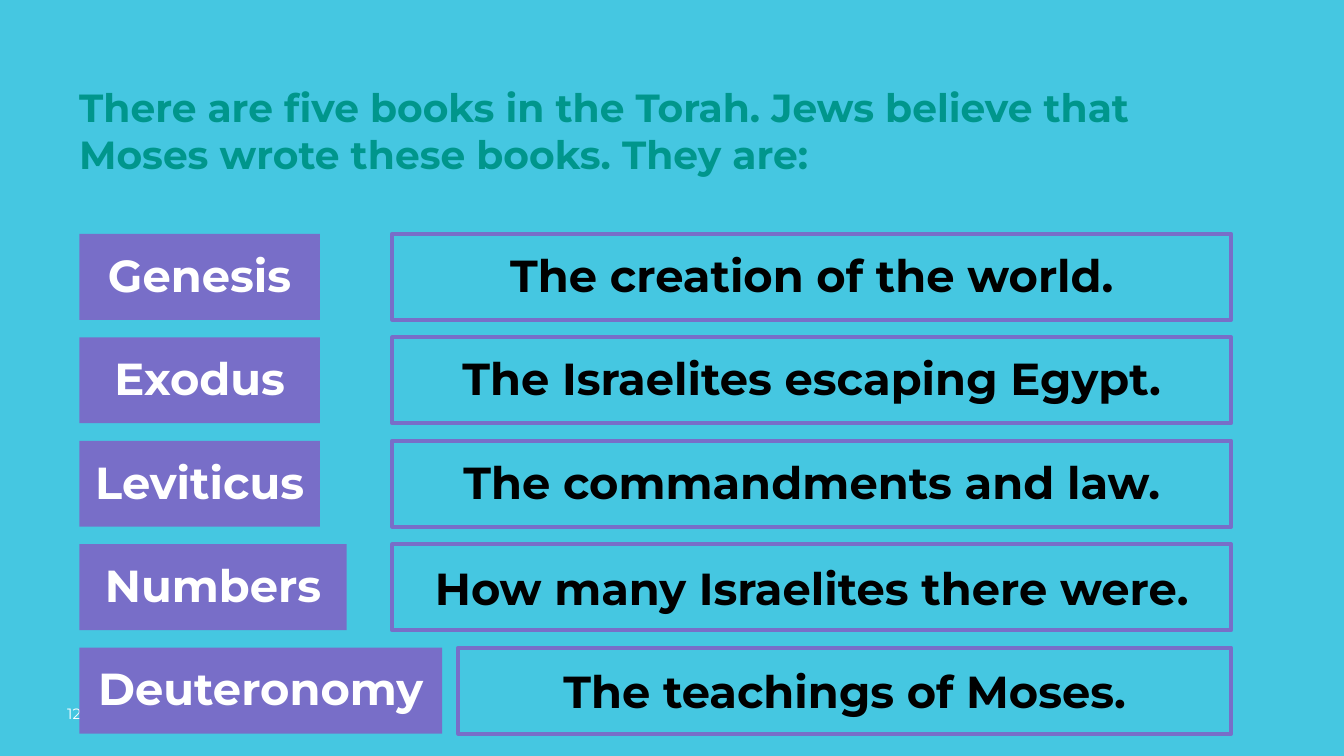
from pptx import Presentation
from pptx.dml.color import RGBColor
from pptx.enum import shapes, text
from pptx.util import Inches, Pt

TURQUOISE = RGBColor(0x45, 0xC7, 0xE1)
TEAL = RGBColor(0x00, 0x96, 0x8C)
PURPLE = RGBColor(0x78, 0x6E, 0xC8)
WHITE = RGBColor(0xFF, 0xFF, 0xFF)
BLACK = RGBColor(0x00, 0x00, 0x00)

LEFT, RIGHT = 0.59, 9.16
TOP, ROW_STEP, ROW_HEIGHT = 1.74, 0.77, 0.64

# Book, its subject, width of the book label, left edge of the subject, anchor of the subject
BOOKS = [
    ("Genesis", "The creation of the world.", 1.79, 2.92, text.MSO_ANCHOR.TOP),
    ("Exodus", "The Israelites escaping Egypt.", 1.79, 2.92, text.MSO_ANCHOR.TOP),
    ("Leviticus", "The commandments and law.", 1.79, 2.92, text.MSO_ANCHOR.TOP),
    ("Numbers", "How many Israelites there were.", 1.99, 2.92, text.MSO_ANCHOR.MIDDLE),
    ("Deuteronomy", "The teachings of Moses.", 2.7, 3.41, text.MSO_ANCHOR.MIDDLE),
]


def write(box, words, size, color, bold=True, inset=0.1, anchor=text.MSO_ANCHOR.TOP):
    """Put one styled paragraph in a box and return it."""
    frame = box.text_frame
    frame.word_wrap = True
    frame.vertical_anchor = anchor
    frame.margin_left = frame.margin_right = Inches(inset)
    frame.margin_top = frame.margin_bottom = Inches(inset)
    frame.text = words
    para = frame.paragraphs[0]
    font = para.runs[0].font
    font.name, font.size, font.bold = "Montserrat", Pt(size), bold
    font.color.rgb = color
    return para


def add_label(page, left, top, width, words, color, anchor=text.MSO_ANCHOR.TOP):
    """Add a rectangle with centred text and return it, ready for fill and line."""
    box = page.shapes.add_shape(shapes.MSO_SHAPE.RECTANGLE, Inches(left), Inches(top),
                                Inches(width), Inches(ROW_HEIGHT))
    box.shadow.inherit = False
    para = write(box, words, 24, color, anchor=anchor)
    para.alignment = text.PP_ALIGN.CENTER
    return box


deck = Presentation()
deck.slide_width = Inches(10)
deck.slide_height = Inches(10 * 9 / 16)
page = deck.slides.add_slide(deck.slide_layouts[6])
page.background.fill.solid()
page.background.fill.fore_color.rgb = TURQUOISE

number = page.shapes.add_textbox(Inches(0.5), Inches(5.24), Inches(0.79), Inches(0.2))
write(number, "12", 8, WHITE, bold=False, inset=0)

intro = page.shapes.add_textbox(Inches(0.49), Inches(0.52), Inches(9.01), Inches(1.87))
write(intro, "There are five books in the Torah. Jews believe that Moses wrote these books. "
             "They are:", 21, TEAL)

for row, (book, subject, book_width, subject_left, anchor) in enumerate(BOOKS):
    top = TOP + row * ROW_STEP

    label = add_label(page, LEFT, top, book_width, book, WHITE)
    label.fill.solid()
    label.fill.fore_color.rgb = PURPLE
    label.line.fill.background()

    outline = add_label(page, subject_left, top, RIGHT - subject_left, subject, BLACK, anchor)
    outline.fill.background()
    outline.line.color.rgb = PURPLE
    outline.line.width = Pt(2.25)

deck.save("out.pptx")
